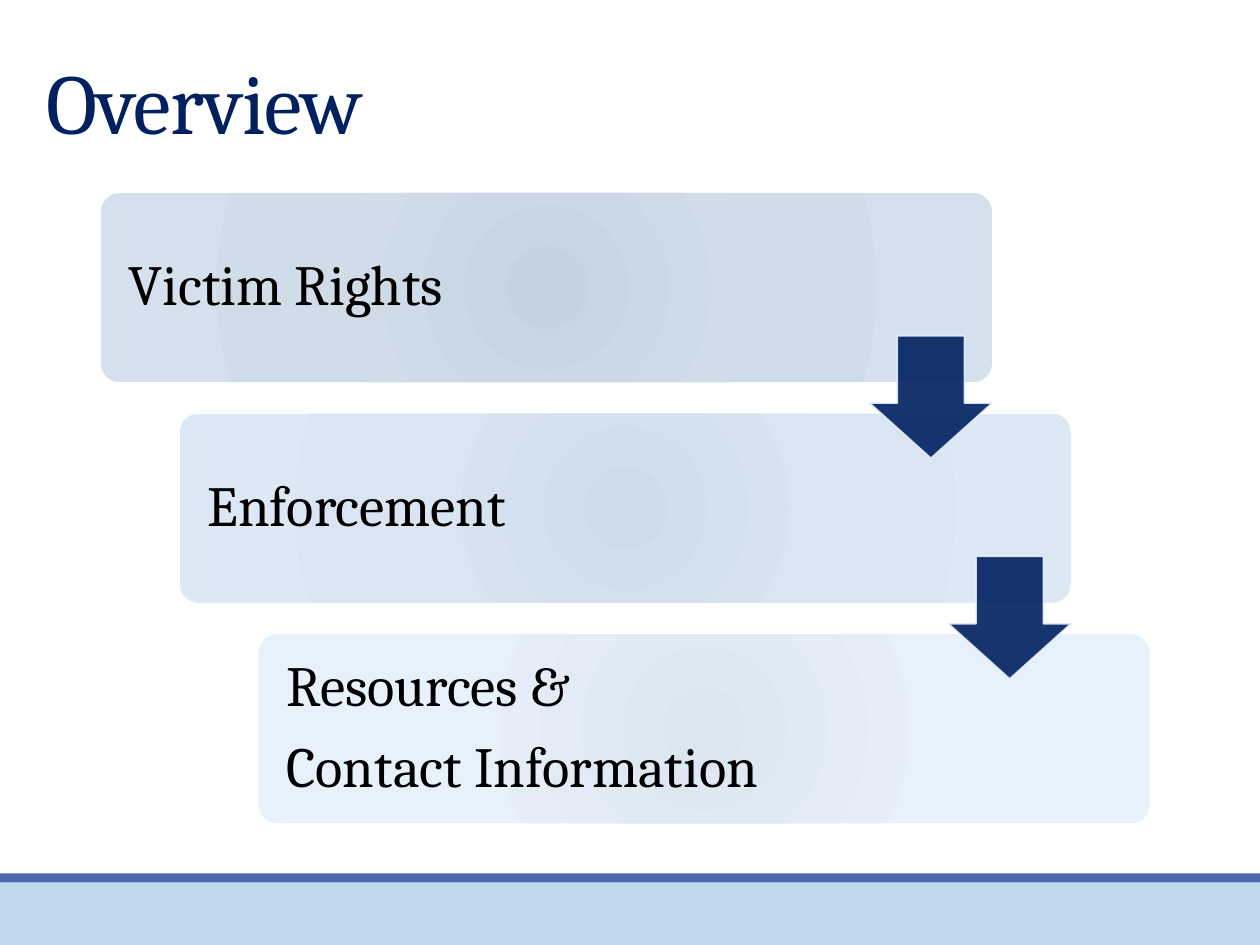
from dataclasses import dataclass

from pptx import Presentation, util as u
from pptx.dml.color import RGBColor
from pptx.enum import shapes, text
from pptx.oxml import parse_xml
from pptx.oxml.ns import nsdecls, qn


@dataclass(frozen=True)
class Theme:
    """Colours, font and type sizes of the slide."""
    font: str = "Cambria"
    navy: str = "002060"
    black: str = "000000"
    band: str = "C0D7EC"
    stripe: str = "4A66AC"
    arrow_edge: str = "E8F0F8"
    gradients: tuple = (
        ("C5D3E1", "D0DDE9", "D4E1ED"),
        ("CEDCEA", "D9E5F1", "DCE9F5"),
        ("DBE6F0", "E5EEF8", "E7F1FB"),
    )
    title_size: int = 54
    step_size: int = 36


THEME = Theme()
WIDTH, HEIGHT = u.Cm(28.22), u.Cm(21.16)
STEPS = (("Victim Rights",), ("Enforcement",), ("Resources &", "Contact Information"))


def style_paragraph(paragraph, size, color, line_spacing):
    """Left-align a paragraph and set its font."""
    paragraph.alignment = text.PP_ALIGN.LEFT
    paragraph.line_spacing = line_spacing
    paragraph.font.name = THEME.font
    paragraph.font.size = u.Pt(size)
    paragraph.font.color.rgb = RGBColor.from_string(color)


def add_plain_shape(slide, kind, left, top, width, height, color):
    """Add a solid preset shape without line or shadow."""
    shape = slide.shapes.add_shape(kind, left, top, width, height)
    shape.shadow.inherit = False
    shape.fill.solid()
    shape.fill.fore_color.rgb = RGBColor.from_string(color)
    shape.line.fill.background()
    return shape


def add_footer(slide, left, top, width, height):
    """Draw the stripe and the pale band that fill the footer box."""
    stripe = u.Cm(0.2)
    rectangle = shapes.MSO_SHAPE.RECTANGLE
    add_plain_shape(slide, rectangle, left, top + stripe, width, height - stripe, THEME.band)
    add_plain_shape(slide, rectangle, left, top, width, stripe, THEME.stripe)


def add_title(slide, left, top, width, height, wording):
    """Place and format the title placeholder."""
    title = slide.shapes.title
    title.left, title.top, title.width, title.height = left, top, width, height
    frame = title.text_frame
    frame.text = wording
    frame.auto_size = text.MSO_AUTO_SIZE.NONE
    frame.vertical_anchor = text.MSO_ANCHOR.BOTTOM
    paragraph = frame.paragraphs[0]
    style_paragraph(paragraph, THEME.title_size, THEME.navy, 0.85)
    paragraph.runs[0].font._element.set("spc", "-60")


def set_radial_fill(shape, colors):
    """Replace the solid fill by a circular gradient."""
    stops = "".join(
        f'<a:gs pos="{position}"><a:srgbClr val="{color}"/></a:gs>'
        for position, color in zip((0, 45000, 100000), colors))
    gradient = parse_xml(
        f'<a:gradFill {nsdecls("a")}><a:gsLst>{stops}</a:gsLst><a:path path="circle">'
        '<a:fillToRect l="100000" t="100000" r="100000" b="100000"/></a:path></a:gradFill>')
    properties = shape._element.spPr
    properties.replace(properties.find(qn("a:solidFill")), gradient)


def add_step(slide, left, top, width, height, lines, colors):
    """Draw one rounded step with its wording."""
    step = add_plain_shape(slide, shapes.MSO_SHAPE.ROUNDED_RECTANGLE,
                           left, top, width, height, colors[0])
    step.adjustments[0] = 0.1
    set_radial_fill(step, colors)
    frame = step.text_frame
    frame.word_wrap = True
    frame.vertical_anchor = text.MSO_ANCHOR.MIDDLE
    frame.margin_left = frame.margin_right = u.Cm(0.5)
    frame.text = "\n".join(lines)
    for paragraph in frame.paragraphs:
        style_paragraph(paragraph, THEME.step_size, THEME.black, 0.9)
        paragraph.space_after = u.Pt(12.6)


def add_arrow(slide, left, top, size):
    """Draw a slightly transparent down arrow in a square box."""
    arrow = add_plain_shape(slide, shapes.MSO_SHAPE.DOWN_ARROW,
                            left, top, size, size, THEME.navy)
    arrow.adjustments[0], arrow.adjustments[1] = 0.55, 0.45
    arrow.line.color.rgb = RGBColor.from_string(THEME.arrow_edge)
    arrow.line.width = u.Pt(1)
    for color in arrow._element.spPr.iter(qn("a:srgbClr")):
        color.append(parse_xml(f'<a:alpha {nsdecls("a")} val="90000"/>'))


def add_staircase(slide, left, top, width, height):
    """Lay out the steps down the box and join them with arrows."""
    step_width, step_height, arrow_size = u.Cm(19.96), u.Cm(4.24), u.Cm(2.74)
    gaps = len(STEPS) - 1
    shift = (width - step_width) // gaps
    drop = (height - step_height) // gaps
    for index, (lines, colors) in enumerate(zip(STEPS, THEME.gradients)):
        add_step(slide, left + index * shift, top + index * drop,
                 step_width, step_height, lines, colors)
    for index in range(gaps):
        add_arrow(slide, left + index * shift + step_width - arrow_size,
                  top + index * drop + u.Cm(3.2), arrow_size)


def main():
    """Build the overview slide and save it."""
    presentation = Presentation()
    presentation.slide_width, presentation.slide_height = WIDTH, HEIGHT
    slide = presentation.slides.add_slide(presentation.slide_layouts[5])
    footer_top = u.Cm(19.56)
    add_footer(slide, 0, footer_top, WIDTH, HEIGHT - footer_top)
    add_title(slide, u.Cm(0.79), 0, u.Cm(24.61), u.Cm(3.53), "Overview")
    add_staircase(slide, u.Cm(2.26), u.Cm(4.32), u.Cm(23.49), u.Cm(14.12))
    presentation.save("out.pptx")


if __name__ == "__main__":
    main()
